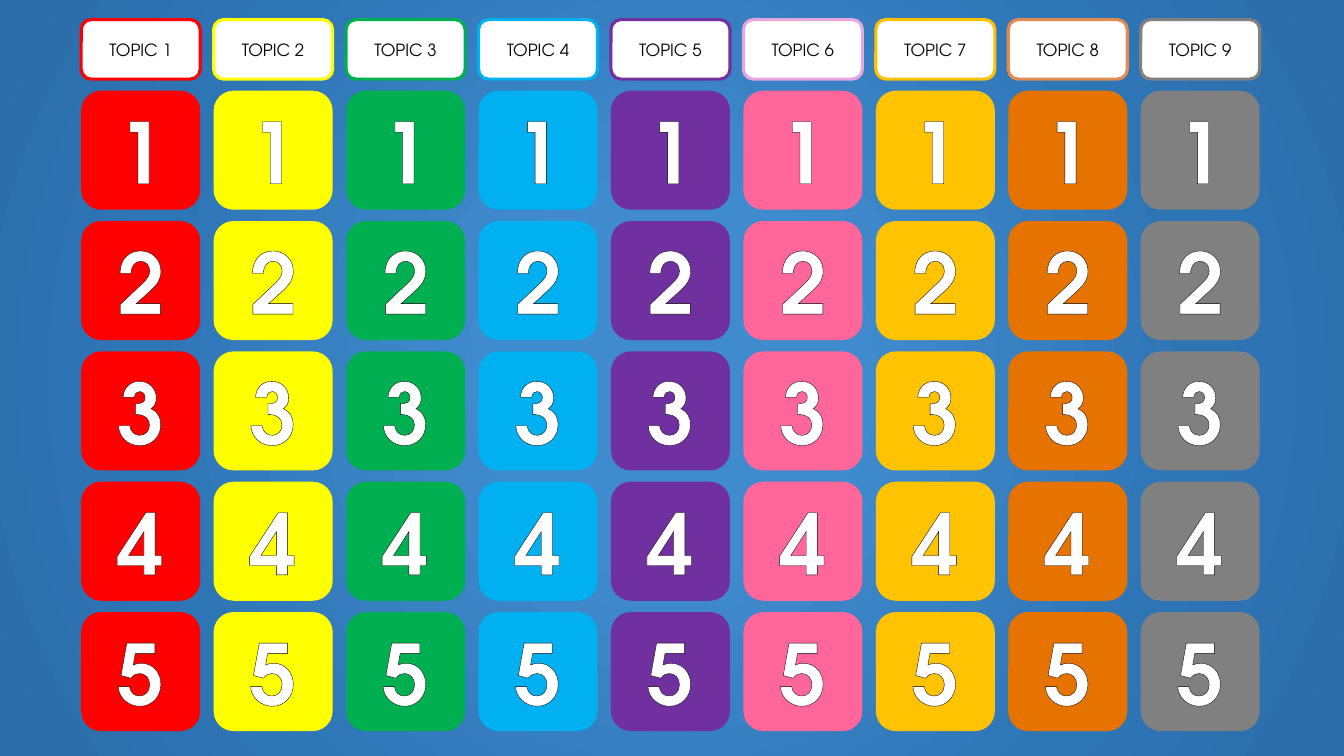
from pptx import Presentation
from pptx.dml.color import RGBColor
from pptx.enum import shapes, text
from pptx.oxml import parse_xml
from pptx.oxml.ns import nsdecls
from pptx.util import Pt

FONT = "TeX Gyre Adventor"
WHITE = RGBColor(0xFF, 0xFF, 0xFF)
BLACK = RGBColor(0x00, 0x00, 0x00)
RED = RGBColor(0xFF, 0x00, 0x00)
YELLOW = RGBColor(0xFF, 0xFF, 0x00)
GREEN = RGBColor(0x00, 0xB0, 0x50)
BLUE = RGBColor(0x00, 0xB0, 0xF0)
PURPLE = RGBColor(0x70, 0x30, 0xA0)
PINK = RGBColor(0xFF, 0x66, 0x99)
LILAC = RGBColor(0xE6, 0xA5, 0xDC)
AMBER = RGBColor(0xFF, 0xC3, 0x01)
GOLD = RGBColor(0xFF, 0xC0, 0x00)
ORANGE = RGBColor(0xE6, 0x73, 0x00)
COPPER = RGBColor(0xE0, 0x8B, 0x52)
GREY = RGBColor(0x80, 0x80, 0x80)
BG_STOPS = [
    (0, RGBColor(0x40, 0x8B, 0xCE)),
    (23, RGBColor(0x40, 0x8B, 0xCE)),
    (69, RGBColor(0x2E, 0x75, 0xB6)),
    (97, RGBColor(0x2B, 0x6D, 0xA9)),
]

# Tile fill and header border of each topic
TOPICS = [(RED, RED), (YELLOW, YELLOW), (GREEN, GREEN), (BLUE, BLUE),
          (PURPLE, PURPLE), (PINK, LILAC), (AMBER, GOLD),
          (ORANGE, COPPER), (GREY, GREY)]
ROWS = 5
TILE = 85
HEADER_HEIGHT = 42.5
COLUMN_STEP = 94.6
ROW_STEP = 93.1


def set_radial_background(s):
    stops = "".join(
        f'<a:gs pos="{pos * 1000}"><a:srgbClr val="{color}"/></a:gs>'
        for pos, color in BG_STOPS)
    s.element.cSld.insert(0, parse_xml(
        f'<p:bg {nsdecls("p", "a")}><p:bgPr><a:gradFill rotWithShape="1">'
        f'<a:gsLst>{stops}</a:gsLst><a:path path="circle">'
        '<a:fillToRect l="50000" t="50000" r="50000" b="50000"/></a:path>'
        '</a:gradFill><a:effectLst/></p:bgPr></p:bg>'))


def add_card(s, left, top, height, label, size, fill, color, border=None):
    """Add a rounded card with one centred, thinly outlined label."""
    sp = s.shapes.add_shape(shapes.MSO_SHAPE.ROUNDED_RECTANGLE,
                            Pt(left), Pt(top), Pt(TILE), Pt(height))
    sp.shadow.inherit = False
    sp.fill.solid()
    sp.fill.fore_color.rgb = fill
    if border is None:
        sp.line.fill.background()
    else:
        sp.line.color.rgb = border
        sp.line.width = Pt(2.25)
    tf = sp.text_frame
    tf.vertical_anchor = text.MSO_ANCHOR.MIDDLE
    p = tf.paragraphs[0]
    p.alignment = text.PP_ALIGN.CENTER
    r = p.add_run()
    r.text = label
    r.font.name = FONT
    r.font.size = Pt(size)
    r.font.color.rgb = color
    r.font.bold = border is None
    r.font._element.insert(0, parse_xml(
        f'<a:ln {nsdecls("a")} w="{Pt(0.25)}"><a:solidFill>'
        f'<a:srgbClr val="{BLACK}"/></a:solidFill></a:ln>'))


def add_number_grid(s, left, top):
    for col, (fill, _) in enumerate(TOPICS):
        for row in range(ROWS):
            add_card(s, left + col * COLUMN_STEP, top + row * ROW_STEP, TILE,
                     str(row + 1), 60, fill, WHITE)


def add_topic_headers(s, left, top):
    for col, (_, border) in enumerate(TOPICS):
        add_card(s, left + col * COLUMN_STEP, top, HEADER_HEIGHT,
                 f"TOPIC {col + 1}", 12, WHITE, BLACK, border)


def main():
    prs = Presentation()
    prs.slide_width, prs.slide_height = Pt(960), Pt(540)
    s = prs.slides.add_slide(prs.slide_layouts[6])
    set_radial_background(s)
    add_number_grid(s, 58, 64.8)
    add_topic_headers(s, 58, 14)
    prs.save("out.pptx")


if __name__ == "__main__":
    main()
